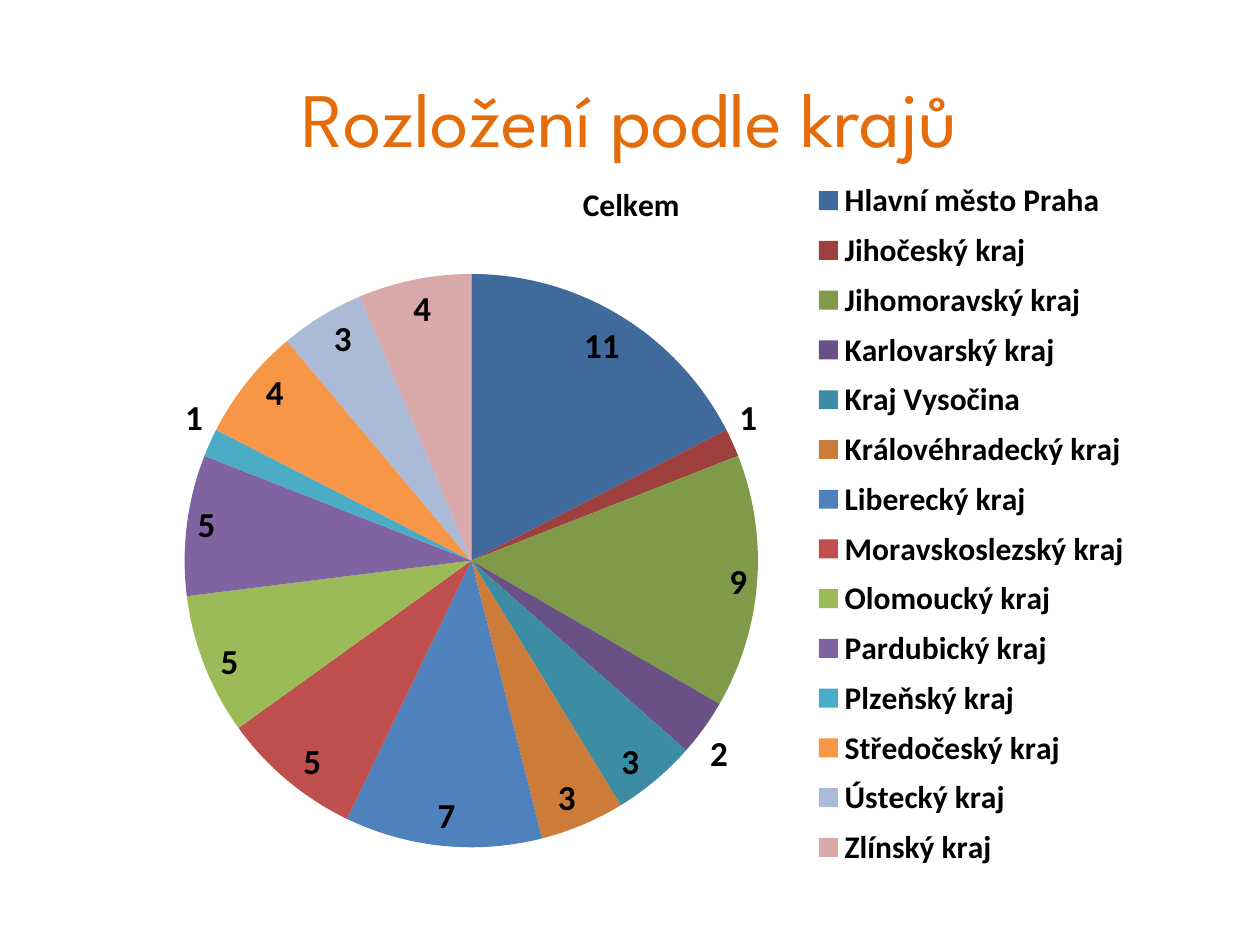
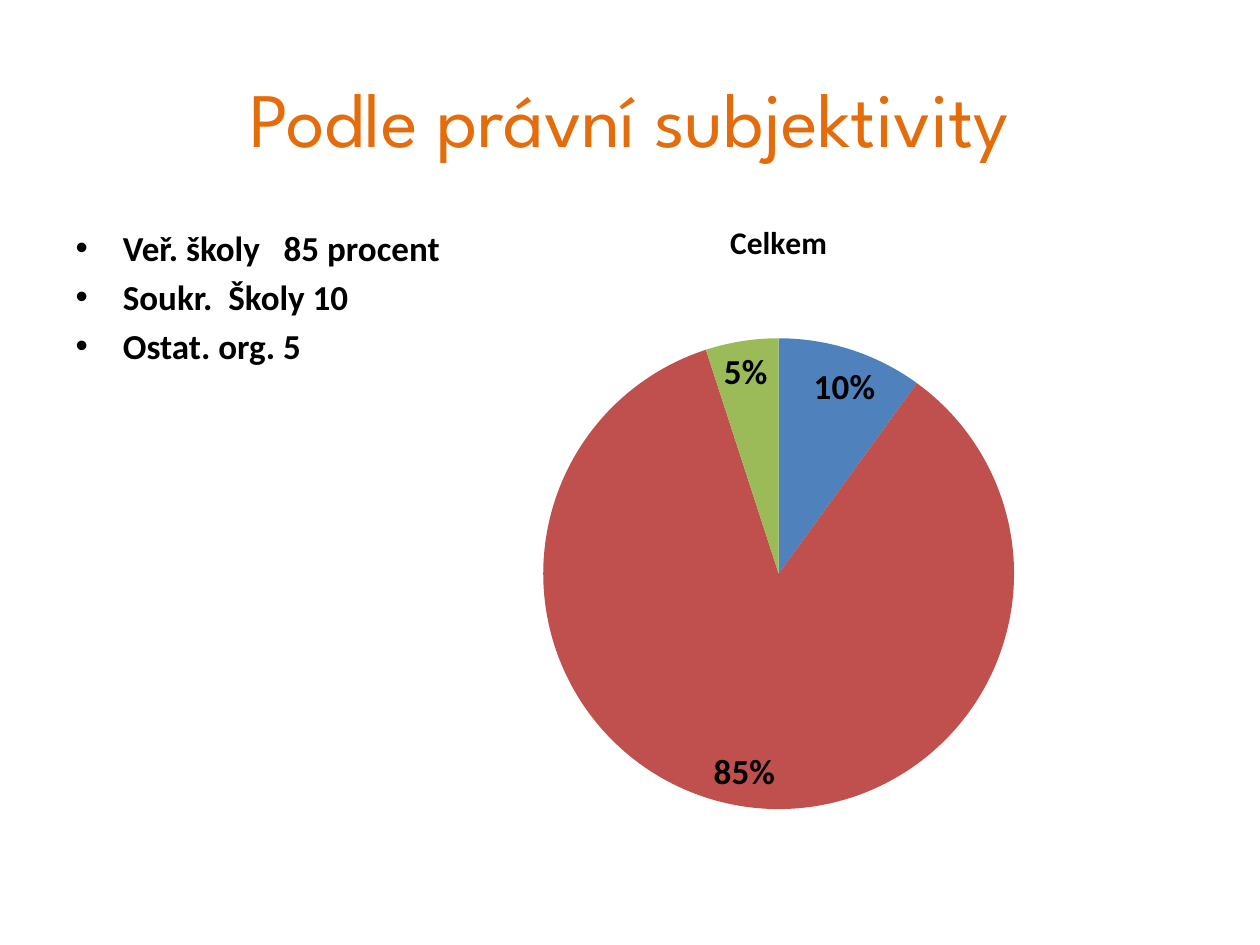
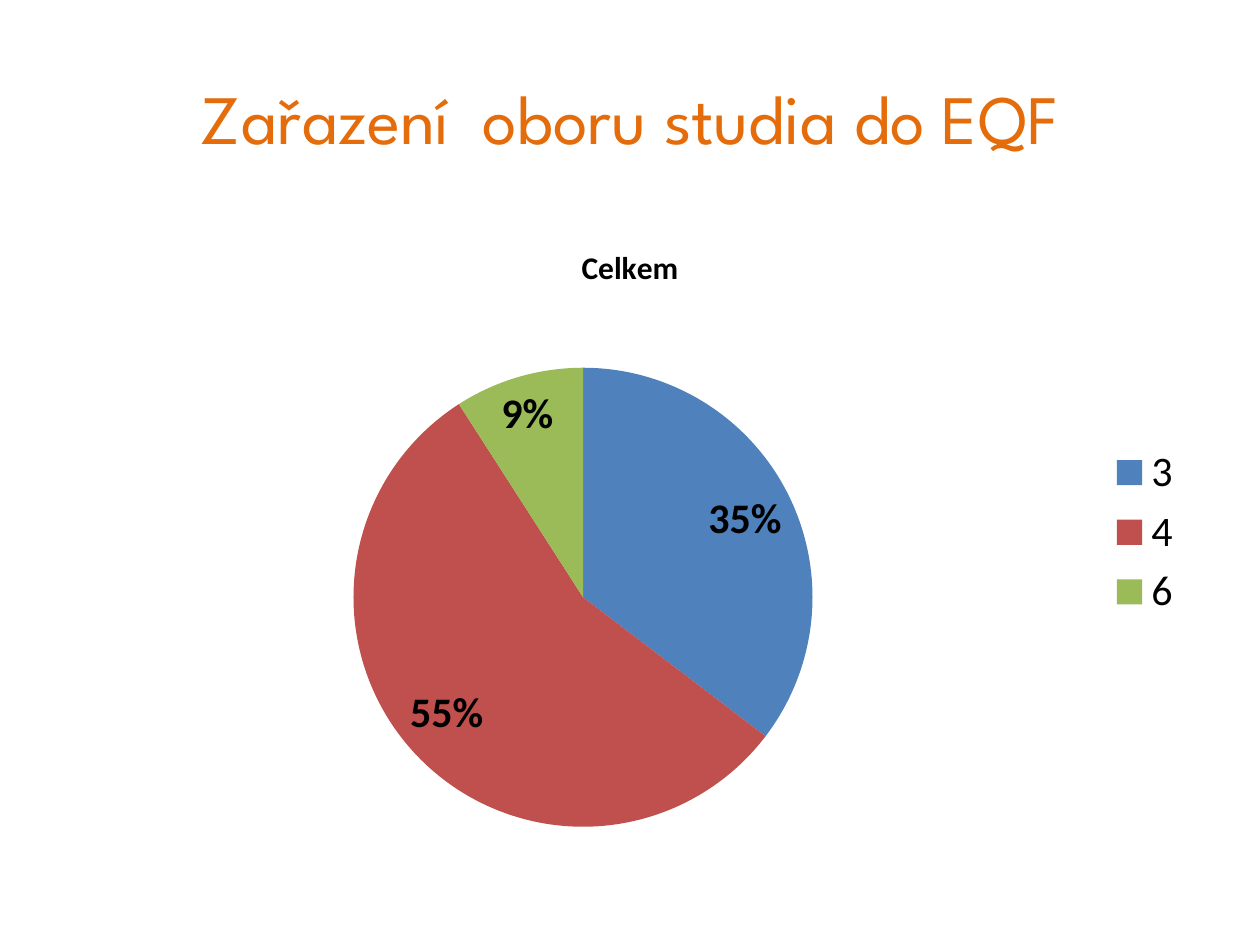
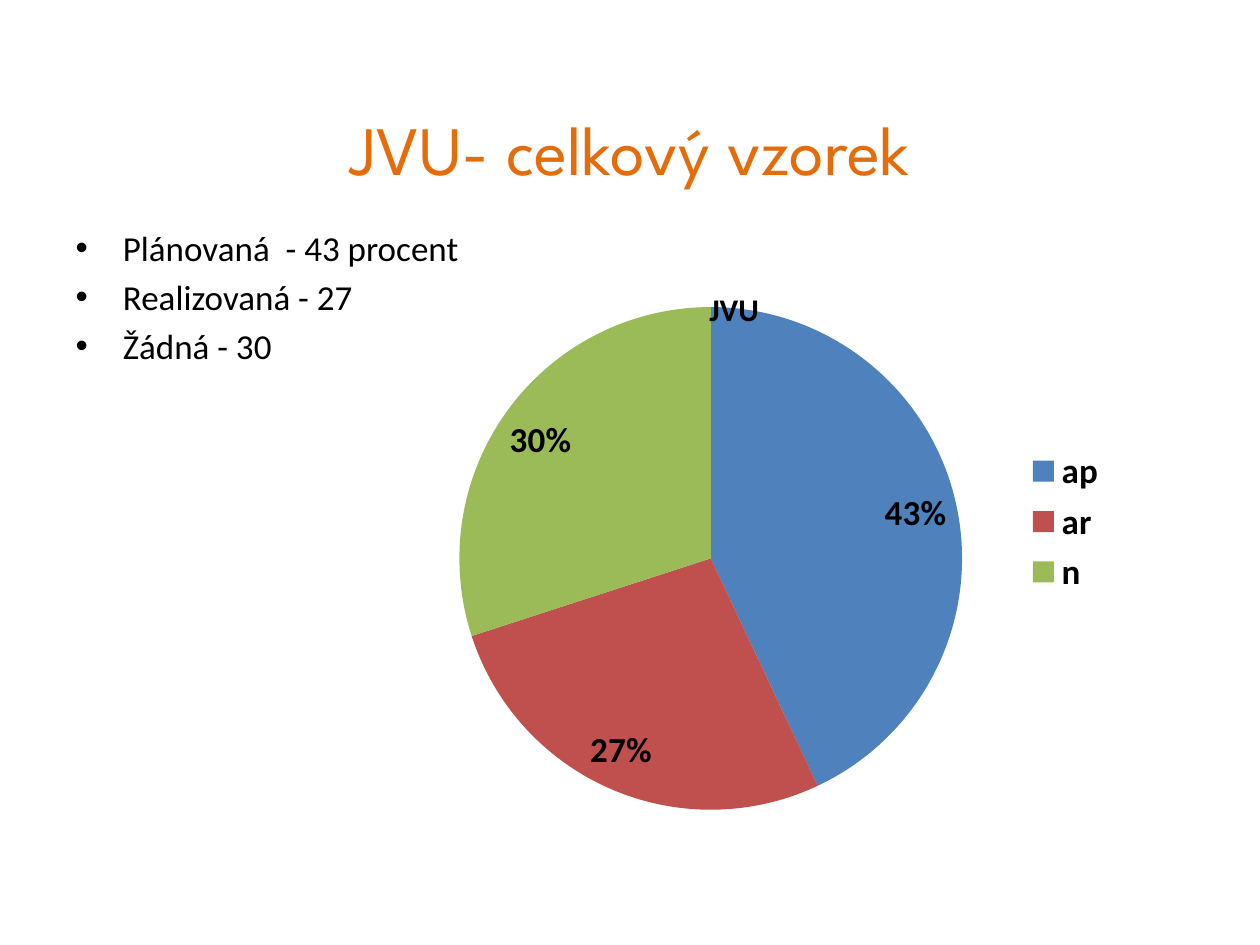
from lxml.etree import SubElement
from pptx import Presentation
from pptx.chart.data import CategoryChartData
from pptx.dml.color import RGBColor
from pptx.enum.chart import XL_CHART_TYPE, XL_LABEL_POSITION, XL_LEGEND_POSITION
from pptx.enum.text import MSO_ANCHOR, MSO_AUTO_SIZE, PP_ALIGN
from pptx.oxml.ns import qn
from pptx.util import Inches, Pt

ORANGE = RGBColor(0xE4, 0x6C, 0x0A)
BLACK = RGBColor(0x00, 0x00, 0x00)
BASE_HUES = [RGBColor(0x4F, 0x81, 0xBD), RGBColor(0xC0, 0x50, 0x4D),
             RGBColor(0x9B, 0xBB, 0x59), RGBColor(0x80, 0x64, 0xA2),
             RGBColor(0x4B, 0xAC, 0xC6), RGBColor(0xF7, 0x96, 0x46)]
DARK_HUES = [RGBColor(0x40, 0x69, 0x9C), RGBColor(0x9E, 0x41, 0x3E),
             RGBColor(0x7F, 0x9A, 0x48), RGBColor(0x69, 0x51, 0x85),
             RGBColor(0x3C, 0x8D, 0xA3), RGBColor(0xCC, 0x7B, 0x38)]
PALE_HUES = [RGBColor(0xAA, 0xBA, 0xD7), RGBColor(0xD9, 0xAA, 0xA9)]
REGION_HUES = DARK_HUES + BASE_HUES + PALE_HUES

TITLE_FONT, BODY_FONT = "League Spartan", "Calibri"
TITLE_BOX = [Inches(n) for n in (0.5, 0.3, 9, 1.25)]
BODY_BOX = [Inches(n) for n in (0.5, 1.75, 9, 4.95)]
TITLE_ONLY, TITLE_AND_BODY = 5, 1

REGIONS = {
    "Hlavní město Praha": 11, "Jihočeský kraj": 1, "Jihomoravský kraj": 9,
    "Karlovarský kraj": 2, "Kraj Vysočina": 3, "Královéhradecký kraj": 3,
    "Liberecký kraj": 7, "Moravskoslezský kraj": 5, "Olomoucký kraj": 5,
    "Pardubický kraj": 5, "Plzeňský kraj": 1, "Středočeský kraj": 4,
    "Ústecký kraj": 3, "Zlínský kraj": 4,
}

# "layouts" holds shares of the chart area; "legend" is (size, bold).
SLIDES = [
    dict(title="Rozložení podle krajů", title_size=44, bullets=[],
         chart_title="Celkem", chart_box=(0.51, 1.23, 9, 5.98), shares=REGIONS,
         hues=REGION_HUES, label_size=20, label_format="0", legend=(18, True),
         layouts={"plotArea": (0.106, 0.158, 0.506, 0.761),
                  "legend": (0.65, 0.02, 0.3, 0.94)}),
    dict(title="Podle právní subjektivity", title_size=44,
         bullets=["Veř. školy   85 procent", "Soukr.  Školy 10", "Ostat. org. 5"],
         bold_bullets=True, chart_title="Celkem", chart_box=(2.95, 1.55, 6.46, 5.01),
         shares={"1": 10, "2": 85, "3": 5}, label_size=20, label_format="0%"),
    dict(title="Zařazení  oboru studia do EQF", title_size=39.6, bullets=[],
         chart_title="Celkem", chart_box=(0.5, 1.75, 9, 4.95),
         shares={"3": 35, "4": 55, "6": 9}, label_size=24, label_format='0"%"',
         legend=(24, False)),
    dict(title="JVU- celkový vzorek", title_size=39.6, title_anchor=MSO_ANCHOR.BOTTOM,
         bullets=["Plánovaná  - 43 procent", "Realizovaná - 27", "Žádná - 30"],
         chart_title="JVU", chart_box=(3.19, 1.7, 5.7, 4.88),
         shares={"ap": 43, "ar": 27, "n": 30}, label_size=20, label_format="0%",
         legend=(20, True),
         layouts={"plotArea": (0.08, 0.15, 0.7, 0.82), "title": (0.42, 0.11)}),
]


def style_font(font, size, color=BLACK, bold=False, name=BODY_FONT):
    font.size, font.bold, font.name = Pt(size), bold, name
    font.color.rgb = color


def place_chart_part(chart, tag, shares):
    """Fix a chart part at (x, y[, w, h]), given as shares of the chart area."""
    part = chart.element.find(".//" + qn("c:" + tag))
    layout = part.find(qn("c:layout"))
    if layout is not None:
        part.remove(layout)
    manual = SubElement(SubElement(part, qn("c:layout")), qn("c:manualLayout"))
    part.insert(0 if tag == "plotArea" else 1, manual.getparent())
    if tag == "plotArea":
        SubElement(manual, qn("c:layoutTarget"), val="inner")
    for mode in ("xMode", "yMode"):
        SubElement(manual, qn("c:" + mode), val="edge")
    for side, share in zip("xywh", shares):
        SubElement(manual, qn("c:" + side), val=str(share))


deck = Presentation()
deck.slide_width, deck.slide_height = Inches(10), Inches(7.5)

for content in SLIDES:
    bullets = content["bullets"]
    layout_index = TITLE_AND_BODY if bullets else TITLE_ONLY
    slide = deck.slides.add_slide(deck.slide_layouts[layout_index])

    heading = slide.shapes.title
    heading.left, heading.top, heading.width, heading.height = TITLE_BOX
    heading.text_frame.auto_size = MSO_AUTO_SIZE.NONE
    heading.text_frame.vertical_anchor = content.get("title_anchor", MSO_ANCHOR.MIDDLE)
    heading_line = heading.text_frame.paragraphs[0]
    heading_line.alignment = PP_ALIGN.CENTER
    heading_run = heading_line.add_run()
    heading_run.text = content["title"]
    style_font(heading_run.font, content["title_size"], ORANGE, name=TITLE_FONT)

    if bullets:
        body = slide.placeholders[1]
        body.left, body.top, body.width, body.height = BODY_BOX
        body.text_frame.auto_size = MSO_AUTO_SIZE.NONE
        for index, bullet in enumerate(bullets):
            frame = body.text_frame
            line = frame.add_paragraph() if index else frame.paragraphs[0]
            run = line.add_run()
            run.text = bullet
            style_font(run.font, 20, bold=content.get("bold_bullets", False))

    pie_data = CategoryChartData()
    pie_data.categories = list(content["shares"])
    pie_data.add_series(content["chart_title"], list(content["shares"].values()))
    chart_box = [Inches(n) for n in content["chart_box"]]
    chart = slide.shapes.add_chart(XL_CHART_TYPE.PIE, *chart_box, pie_data).chart
    style_font(chart.font, 10)

    chart.has_title = True
    caption = chart.chart_title.text_frame.paragraphs[0].add_run()
    caption.text = content["chart_title"]
    style_font(caption.font, 18, bold=True)

    pie = chart.plots[0]
    pie.vary_by_categories = True
    for index, hue in zip(range(len(content["shares"])), content.get("hues", BASE_HUES)):
        slice_fill = pie.series[0].points[index].format.fill
        slice_fill.solid()
        slice_fill.fore_color.rgb = hue

    pie.has_data_labels = True
    labels = pie.data_labels
    labels.show_percentage = content["label_format"] == "0%"
    labels.show_value = not labels.show_percentage
    labels.number_format = content["label_format"]
    labels.number_format_is_linked = False
    labels.position = XL_LABEL_POSITION.BEST_FIT
    style_font(labels.font, content["label_size"], bold=True)

    chart.has_legend = "legend" in content
    if chart.has_legend:
        legend_size, legend_bold = content["legend"]
        chart.legend.position = XL_LEGEND_POSITION.RIGHT
        chart.legend.include_in_layout = False
        style_font(chart.legend.font, legend_size, bold=legend_bold)

    for tag, shares in content.get("layouts", {}).items():
        place_chart_part(chart, tag, shares)

deck.save("out.pptx")
